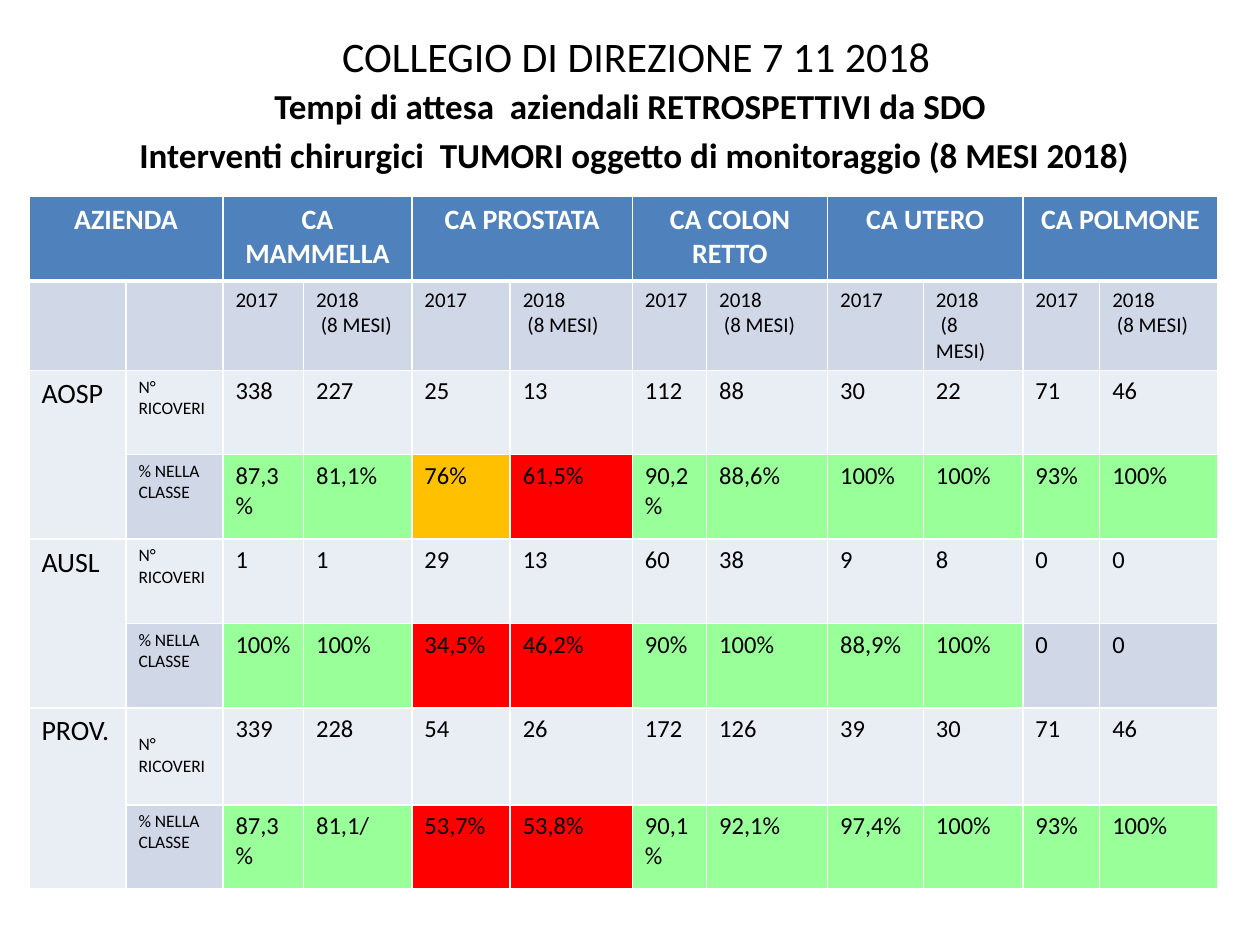
"""Build the slide on waiting times for monitored cancer surgery."""
from lxml import etree
from pptx import Presentation
from pptx.dml.color import RGBColor
from pptx.enum.text import MSO_ANCHOR, PP_ALIGN
from pptx.oxml.ns import qn
from pptx.util import Inches, Pt

CENTER, LEFT = PP_ALIGN.CENTER, PP_ALIGN.LEFT
MIDDLE = MSO_ANCHOR.MIDDLE

THEME = {
    "font": "Calibri",
    "black": "000000", "white": "FFFFFF", "header": "4F81BD",
    "dark": "D0D8E8", "light": "E9EDF4",
    "good": "99FF99", "fair": "FFC000", "poor": "FF0000",
    "title": 24, "subtitle": 20, "head": 16, "value": 14, "year": 12, "label": 10,
    "rule": 1, "head_rule": 3,
}

TITLE = "COLLEGIO DI DIREZIONE 7 11 2018"
SUBTITLES = [
    "Tempi di attesa  aziendali RETROSPETTIVI da SDO ",
    "Interventi chirurgici  TUMORI oggetto di monitoraggio (8 MESI 2018)",
]
HEADERS = ["AZIENDA", "CA MAMMELLA", "CA PROSTATA", "CA COLON RETTO", "CA UTERO", "CA POLMONE"]
YEARS = ["2017", "2018\n (8 MESI)"]
MEASURES = ["N° RICOVERI", "% NELLA CLASSE"]
HOSPITALS = [
    ("AOSP",
     ["338", "227", "25", "13", "112", "88", "30", "22", "71", "46"],
     ["87,3%", "81,1%", "76%", "61,5%", "90,2%", "88,6%", "100%", "100%", "93%", "100%"]),
    ("AUSL",
     ["1", "1", "29", "13", "60", "38", "9", "8", "0", "0"],
     ["100%", "100%", "34,5%", "46,2%", "90%", "100%", "88,9%", "100%", "0", "0"]),
    ("PROV.",
     ["339", "228", "54", "26", "172", "126", "39", "30", "71", "46"],
     ["87,3%", "81,1/", "53,7%", "53,8%", "90,1%", "92,1%", "97,4%", "100%", "93%", "100%"]),
]
COL_WIDTHS = [0.77, 0.77, 0.64, 0.86, 0.78, 0.97, 0.59, 0.96, 0.76, 0.79, 0.61, 0.94]
ROW_HEIGHTS = [0.67, 0.71, 0.67, 0.67, 0.67, 0.67, 0.77, 0.67]


def style(p, size, color="black", bold=False, align=LEFT):
    p.alignment = align
    p.font.name = THEME["font"]
    p.font.size = Pt(THEME[size])
    p.font.bold = bold
    p.font.color.rgb = RGBColor.from_string(THEME[color])


def add_border(cell, side, width):
    ln = etree.SubElement(cell._tc.get_or_add_tcPr(), qn(f"a:ln{side}"), w=str(Pt(width)))
    fill = etree.SubElement(ln, qn("a:solidFill"))
    etree.SubElement(fill, qn("a:srgbClr"), val=THEME["white"])


def fill_cell(cell, text, fill, size, **font):
    cell.fill.solid()
    cell.fill.fore_color.rgb = RGBColor.from_string(THEME[fill])
    cell.text = text
    for p in cell.text_frame.paragraphs:
        style(p, size, **font)


def rating(text):
    share = float(text.rstrip("%/").replace(",", "."))
    if share == 0:
        return "dark"
    return "good" if share >= 80 else "fair" if share >= 70 else "poor"


def add_heading(s):
    title = s.shapes.title
    title.left, title.top, title.width, title.height = map(Inches, (0.55, 0.16, 9, 0.56))
    title.text_frame.text = TITLE
    title.text_frame.vertical_anchor = MIDDLE
    style(title.text_frame.paragraphs[0], "title", align=CENTER)

    tf = s.shapes.add_textbox(*map(Inches, (0.31, 0.62, 9.45, 0.92))).text_frame
    tf.word_wrap = True
    tf.text = "\n".join(SUBTITLES)
    for p in tf.paragraphs:
        style(p, "subtitle", bold=True, align=CENTER)
        p.space_before = Pt(4)


def add_waiting_table(s):
    frame = s.shapes.add_table(
        len(ROW_HEIGHTS), len(COL_WIDTHS), Inches(0.23), Inches(1.56),
        Inches(sum(COL_WIDTHS)), Inches(sum(ROW_HEIGHTS)))
    table = frame.table
    for col, width in zip(table.columns, COL_WIDTHS):
        col.width = Inches(width)
    for row, height in zip(table.rows, ROW_HEIGHTS):
        row.height = Inches(height)

    for r in range(len(ROW_HEIGHTS)):
        for c in range(len(COL_WIDTHS)):
            for side in "LRTB":
                thick = (r, side) in ((0, "B"), (1, "T"))
                add_border(table.cell(r, c), side, THEME["head_rule" if thick else "rule"])

    for i, header in enumerate(HEADERS):
        cell = table.cell(0, 2 * i)
        cell.merge(table.cell(0, 2 * i + 1))
        fill_cell(cell, header, "header", "head", color="white", bold=True, align=CENTER)
        for j, year in enumerate(YEARS):
            fill_cell(table.cell(1, 2 * i + j), year if i else "", "dark", "year")

    for i, (hospital, *lines) in enumerate(HOSPITALS):
        top = 2 + 2 * i
        cell = table.cell(top, 0)
        cell.merge(table.cell(top + 1, 0))
        fill_cell(cell, hospital, "light", "head")
        for j, (measure, values) in enumerate(zip(MEASURES, lines)):
            fill_cell(table.cell(top + j, 1), measure, "dark" if j else "light", "label")
            for c, value in enumerate(values, 2):
                fill_cell(table.cell(top + j, c), value, rating(value) if j else "light", "value")
    table.cell(6, 1).margin_top = Inches(0.21)


def main():
    prs = Presentation()
    prs.slide_width, prs.slide_height = Inches(10), Inches(7.5)
    s = prs.slides.add_slide(prs.slide_layouts[5])
    add_heading(s)
    add_waiting_table(s)
    prs.save("out.pptx")


if __name__ == "__main__":
    main()
